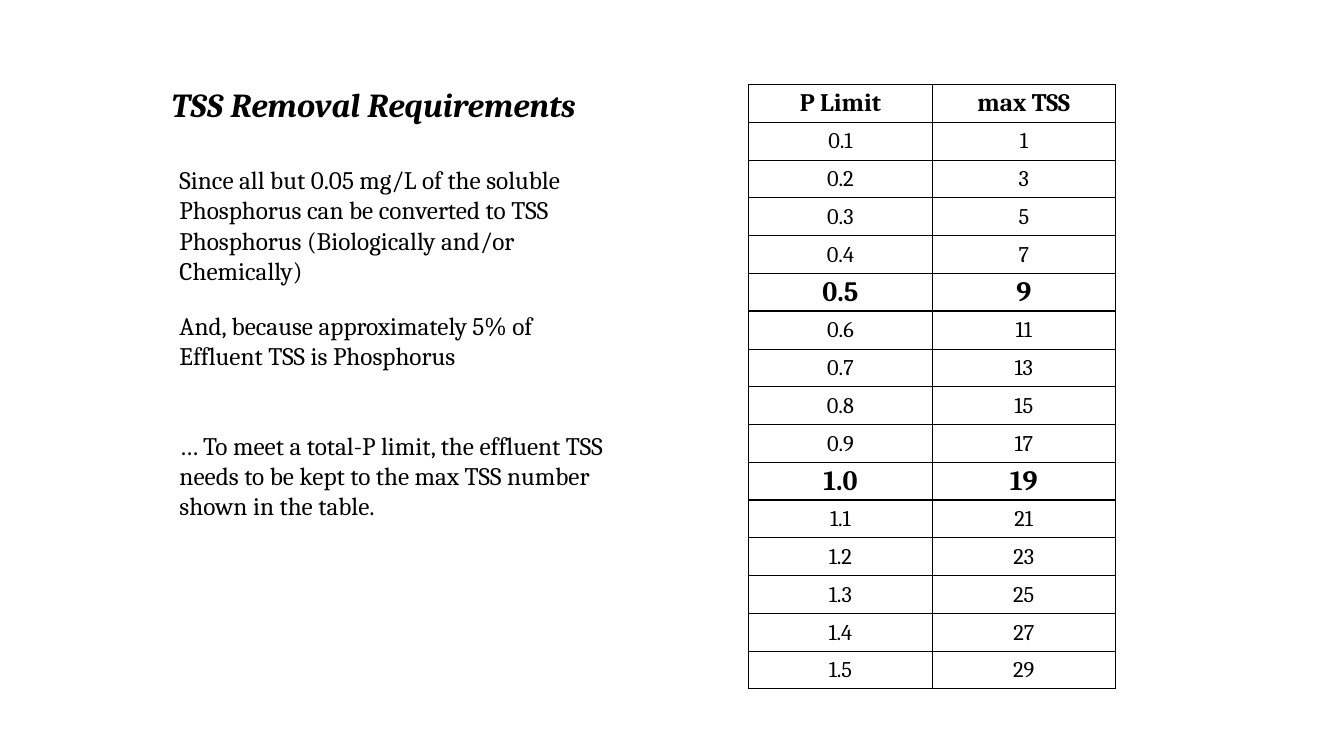
from lxml.etree import SubElement
from pptx import Presentation
from pptx.dml.color import RGBColor
from pptx.enum.text import MSO_ANCHOR as Anchor, MSO_AUTO_SIZE as AutoSize, PP_ALIGN as Align
from pptx.oxml.ns import qn
from pptx.util import Pt

# Content
HEADING = "TSS Removal Requirements"
REASONS = [  # text, space before
    ("Since all but 0.05 mg/L of the soluble Phosphorus can be converted to TSS "
     "Phosphorus (Biologically and/or Chemically)", 6),
    ("And, because approximately 5% of Effluent TSS is Phosphorus", 12),
    ("… To meet a total-P limit, the effluent TSS needs to be kept to the max TSS "
     "number shown in the table.", 36),
]
LIMITS = [
    ("P Limit", "max TSS"),
    ("0.1", "1"), ("0.2", "3"), ("0.3", "5"), ("0.4", "7"), ("0.5", "9"),
    ("0.6", "11"), ("0.7", "13"), ("0.8", "15"), ("0.9", "17"), ("1.0", "19"),
    ("1.1", "21"), ("1.2", "23"), ("1.3", "25"), ("1.4", "27"), ("1.5", "29"),
]
KEY_LIMITS = ("0.5", "1.0")

# Style
FONT = "Cambria"
BLACK = RGBColor(0, 0, 0)
THICK, THIN = Pt(1), Pt(0.5)
COLUMN_WIDTH, ROW_HEIGHT = 131, 27


def style(paragraph, size, bold=False, italic=False):
    font = paragraph.font
    font.name, font.size, font.bold, font.italic = FONT, Pt(size), bold, italic
    font.color.rgb = BLACK


def place(shape, left, top, width, height):
    shape.left, shape.top = Pt(left), Pt(top)
    shape.width, shape.height = Pt(width), Pt(height)


def draw_borders(cell, widths):
    properties = cell._tc.get_or_add_tcPr()
    for side, width in zip(("lnL", "lnR", "lnT", "lnB"), widths):
        line = SubElement(properties, qn(f"a:{side}"), w=str(width))
        fill = SubElement(line, qn("a:solidFill"))
        SubElement(fill, qn("a:srgbClr"), val=str(BLACK))


deck = Presentation()
deck.slide_width, deck.slide_height = Pt(960), Pt(540)
slide = deck.slides.add_slide(deck.slide_layouts[1])

# Heading
heading = slide.shapes.title
place(heading, 115.2, 59.8, 504, 90)
heading.text_frame.text = HEADING
heading.text_frame.vertical_anchor = Anchor.TOP
heading.text_frame.auto_size = AutoSize.NONE
heading_line = heading.text_frame.paragraphs[0]
heading_line.alignment = Align.LEFT
heading_line.line_spacing = 0.9
heading_line.space_before = Pt(10)
style(heading_line, 24, bold=True, italic=True)

# Reasons
reasons = slide.placeholders[1]
place(reasons, 121, 113.8, 324, 366)
reasons.text_frame.auto_size = AutoSize.NONE
reasons.text_frame.text = "\n".join(text for text, _ in REASONS)
for paragraph, (_, space_before) in zip(reasons.text_frame.paragraphs, REASONS):
    paragraph.space_before, paragraph.space_after = Pt(space_before), Pt(6)
    style(paragraph, 18)
    indents = paragraph._p.get_or_add_pPr()
    indents.set("marL", "0")
    indents.set("indent", "0")
    SubElement(indents, qn("a:buNone"))
    indents.append(indents.find(qn("a:defRPr")))  # schema order: after the bullet

# Limits table
row_count, column_count = len(LIMITS), len(LIMITS[0])
limits = slide.shapes.add_table(
    row_count, column_count, Pt(534.8), Pt(60.3),
    Pt(column_count * COLUMN_WIDTH), Pt(row_count * ROW_HEIGHT)).table
limits.first_row = limits.horz_banding = False
for row in limits.rows:
    row.height = Pt(ROW_HEIGHT)

# Thick rules frame the table, its header and the key limits
thick_rules = {0, row_count}
for r, (limit, _) in enumerate(LIMITS):
    if r == 0 or limit in KEY_LIMITS:
        thick_rules |= {r, r + 1}

for r, values in enumerate(LIMITS):
    is_key = values[0] in KEY_LIMITS
    size = 18 if r == 0 else 20 if is_key else 16
    for c, value in enumerate(values):
        cell = limits.cell(r, c)
        cell.text = value
        cell.vertical_anchor = Anchor.MIDDLE
        cell.margin_left = cell.margin_right = cell.margin_top = Pt(0.7)
        cell.margin_bottom = 0
        cell.text_frame.paragraphs[0].alignment = Align.CENTER
        style(cell.text_frame.paragraphs[0], size, bold=r == 0 or is_key)
        outer = (c == 0, c == column_count - 1, r in thick_rules, r + 1 in thick_rules)
        draw_borders(cell, [THICK if edge else THIN for edge in outer])
        cell.fill.background()

deck.save("out.pptx")
